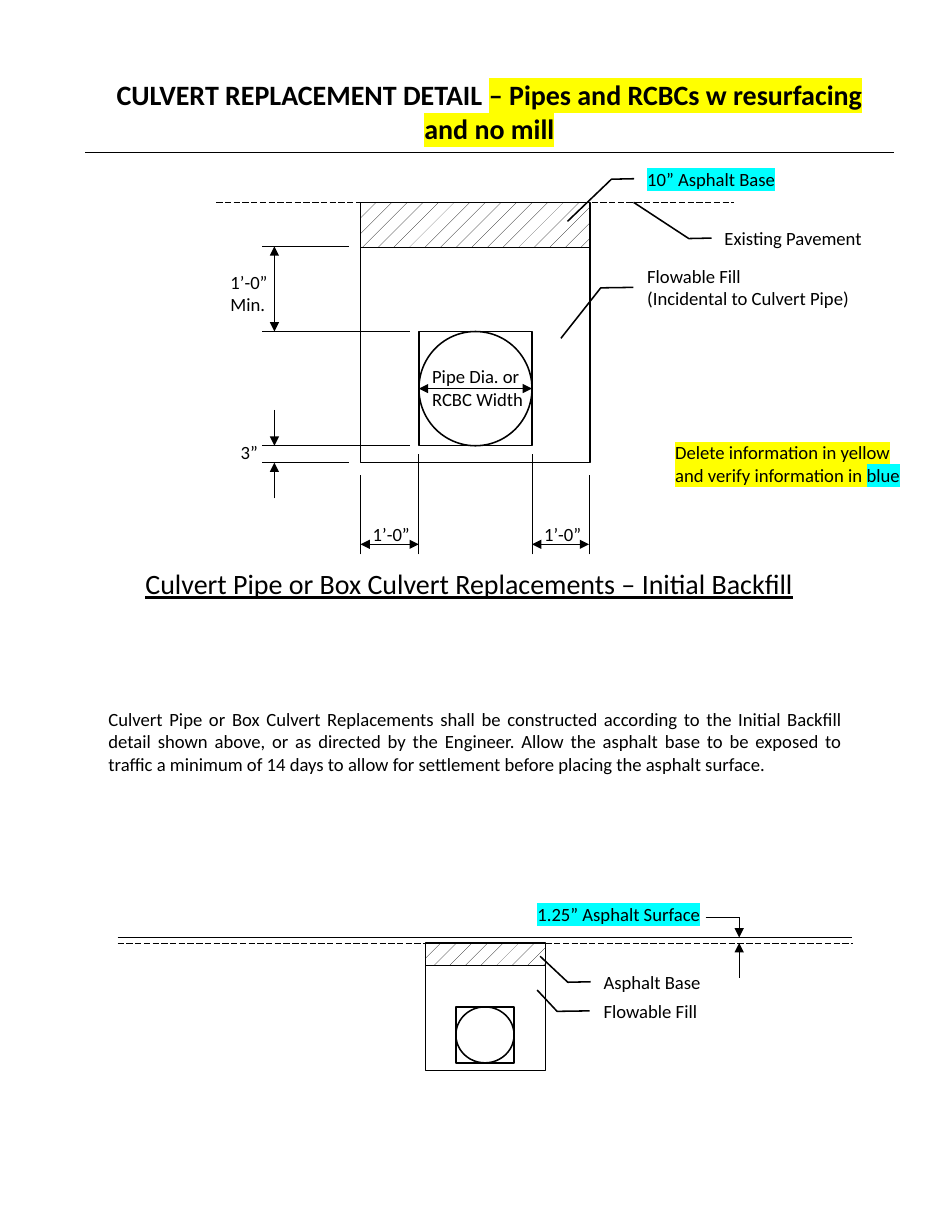
from lxml.etree import SubElement
from pptx import Presentation
from pptx.dml.color import RGBColor
from pptx.enum.dml import MSO_LINE, MSO_PATTERN
from pptx.enum.shapes import MSO_CONNECTOR, MSO_SHAPE
from pptx.enum.text import MSO_ANCHOR, MSO_AUTO_SIZE, PP_ALIGN
from pptx.oxml import parse_xml
from pptx.oxml.ns import nsdecls, qn
from pptx.util import Inches, Pt

BLACK = RGBColor(0x00, 0x00, 0x00)
WHITE = RGBColor(0xFF, 0xFF, 0xFF)
YELLOW = RGBColor(0xFF, 0xFF, 0x00)
CYAN = RGBColor(0x00, 0xFF, 0xFF)

TITLE = [[("CULVERT REPLACEMENT DETAIL ", None),
          ("– Pipes and RCBCs w resurfacing and no mill", YELLOW)]]
HEADING = [[("Culvert Pipe or Box Culvert Replacements – Initial Backfill", None)]]
NOTE = [[("Culvert Pipe or Box Culvert Replacements shall be constructed according "
          "to the Initial Backfill detail shown above, or as directed by the Engineer. "
          "Allow the asphalt base to be exposed to traffic a minimum of 14 days to allow "
          "for settlement before placing the asphalt surface.", None)]]
REMARK = [[("Delete information in yellow and verify information in ", YELLOW),
           ("blue", CYAN)]]
SURFACE = [[("1.25” Asphalt Surface", CYAN)]]

LABELS = [
    (3.23, 4.62, 0.54, ["1’-0”"]),
    (4.76, 4.62, 0.54, ["1’-0”"]),
    (3.76, 3.21, 1.01, ["Pipe Dia. or", "RCBC Width"]),
    (2.05, 3.89, 0.36, ["3”"]),
    (1.96, 2.37, 0.54, ["1’-0”", "Min."]),
]
CALLOUTS = [
    (5.29, 8.59, 1.61, (-0.15, -0.291), ["Asphalt Base"], None),
    (5.29, 8.85, 2.31, (-0.03, -0.214), ["Flowable Fill"], None),
    (5.68, 1.42, 1.61, (1.59, -0.381), ["10” Asphalt Base"], CYAN),
    (5.68, 2.39, 2.31, (1.803, -0.291),
     ["Flowable Fill", "(Incidental to Culvert Pipe)"], None),
    (6.37, 1.95, 1.61, (-0.41, -0.443), ["Existing Pavement"], None),
]
LEFT, RIGHT = 3.22, 5.26
PIPE_L, PIPE_R = 3.74, 4.75
ROAD, BASE, CROWN, INVERT, FLOOR = 1.81, 2.2, 2.96, 3.98, 4.13
DIM_X, DIM_Y = 2.45, 4.86
TOP, GRADE, MARK_X, MARK_Y = 8.37, 8.42, 6.6, 8.19
DETAILS = [
    ((LEFT, BASE, 2.05, 1.93), (LEFT, ROAD, 2.05, 0.4), (PIPE_L, CROWN, 1.01, 1.02)),
    ((3.8, 8.61, 1.07, 0.95), (3.8, GRADE, 1.07, 0.2), (4.07, 8.99, 0.52, 0.5)),
]
DASHED = [(1.93, ROAD, 6.55, ROAD), (1.05, GRADE, 7.62, GRADE)]
PLAIN = [(2.34, y, x, y) for y, x in
         [(BASE, 3.12), (FLOOR, 3.12), (CROWN, 3.66), (INVERT, 3.66)]]
PLAIN += [(x, 4.95, x, y) for x, y in
          [(LEFT, 4.24), (PIPE_L, 4.05), (PIPE_R, 4.05), (RIGHT, 4.24)]]
PLAIN += [(6.3, MARK_Y, MARK_X, MARK_Y)]
SINGLE = [
    (DIM_X, 3.66, DIM_X, INVERT), (DIM_X, 4.45, DIM_X, FLOOR),
    (MARK_X, 8.73, MARK_X, GRADE), (MARK_X, MARK_Y, MARK_X, TOP),
]
DOUBLE = [
    (DIM_X, BASE, DIM_X, CROWN),
    (PIPE_L, DIM_Y, LEFT, DIM_Y), (RIGHT, DIM_Y, PIPE_R, DIM_Y),
]


def write(frame, paras, size=12, align=PP_ALIGN.LEFT, bold=False, under=False):
    for i, parts in enumerate(paras):
        para = frame.paragraphs[0] if i == 0 else frame.add_paragraph()
        para.alignment = align
        for text, mark in parts:
            run = para.add_run()
            run.text = text
            font = run.font
            font.size, font.bold, font.underline = Pt(size), bold, under
            font.color.rgb = BLACK
            font.name = "Calibri"
            if mark:
                fill = font._element.find(qn("a:solidFill"))
                fill.addnext(parse_xml(
                    f'<a:highlight {nsdecls("a")}><a:srgbClr val="{mark}"/></a:highlight>'))


def rows(lines, mark=None):
    return [[(line, mark)] for line in lines]


def add_text(shapes, box, paras, wrap=True, **style):
    frame = shapes.add_textbox(*map(Inches, box)).text_frame
    frame.word_wrap = wrap
    frame.auto_size = MSO_AUTO_SIZE.SHAPE_TO_FIT_TEXT
    write(frame, paras, **style)


def add_box(shapes, kind, box, hatch=False):
    shape = shapes.add_shape(kind, *map(Inches, box))
    shape.shadow.inherit = False
    shape.line.color.rgb = BLACK
    shape.line.width = Pt(1)
    if hatch:
        shape.fill.patterned()
        shape.fill.pattern = MSO_PATTERN.PERCENT_5
        shape.fill.fore_color.rgb = BLACK
        shape.fill.back_color.rgb = WHITE
    else:
        shape.fill.background()
    return shape


def add_line(shapes, ends, width=0.5, dash=False, tips=()):
    line = shapes.add_connector(MSO_CONNECTOR.STRAIGHT, *map(Inches, ends))
    line.line.color.rgb = BLACK
    line.line.width = Pt(width)
    if dash:
        line.line.dash_style = MSO_LINE.LONG_DASH
    for tip in tips:
        SubElement(line.line._get_or_add_ln(), qn(f"a:{tip}"), type="triangle")
    SubElement(line._element.spPr, qn("a:effectLst"))
    return line


def add_title(shapes):
    table = shapes.add_table(1, 1, *map(Inches, (0.75, 0.65, 7.24, 0.41))).table
    table.first_row = table.horz_banding = False
    cell = table.cell(0, 0)
    cell.fill.background()
    write(cell.text_frame, TITLE, 18, PP_ALIGN.CENTER, bold=True)
    props = cell._tc.get_or_add_tcPr()
    for i, side in enumerate("LRTB"):
        color = BLACK if side == "B" else WHITE
        props.insert(i, parse_xml(
            f'<a:ln{side} {nsdecls("a")} w="12700"><a:solidFill>'
            f'<a:srgbClr val="{color}"/></a:solidFill></a:ln{side}>'))


def add_callout(shapes, left, top, width, tip, lines, mark):
    shape = add_box(shapes, MSO_SHAPE.LINE_CALLOUT_2_NO_BORDER, (left, top, width, 0.35))
    for i, value in enumerate((0.502, -0.011, 0.515, -0.137, *tip)):
        shape.adjustments[i] = value
    shape.text_frame.vertical_anchor = MSO_ANCHOR.MIDDLE
    write(shape.text_frame, rows(lines, mark))


def main():
    """Build the culvert replacement detail sheet."""
    deck = Presentation()
    deck.slide_width, deck.slide_height = Inches(8.5), Inches(11)
    shapes = deck.slides.add_slide(deck.slide_layouts[6]).shapes
    add_title(shapes)
    pipes = []
    for trench, base, pipe in DETAILS:
        add_box(shapes, MSO_SHAPE.RECTANGLE, trench)
        add_box(shapes, MSO_SHAPE.RECTANGLE, base, hatch=True)
        add_box(shapes, MSO_SHAPE.OVAL, pipe)
        pipes.append(add_box(shapes, MSO_SHAPE.RECTANGLE, pipe))
    both = ("headEnd", "tailEnd")
    for group, tips in ((PLAIN, ()), (SINGLE, ("tailEnd",)), (DOUBLE, both)):
        for ends in group:
            add_line(shapes, ends, tips=tips)
    for ends in DASHED:
        add_line(shapes, ends, dash=True)
    add_line(shapes, (1.05, TOP, 7.61, TOP), width=1)
    span = add_line(shapes, (PIPE_L, 3.47, PIPE_R, 3.47), tips=both)
    span.begin_connect(pipes[0], 1)
    span.end_connect(pipes[0], 3)
    for left, top, width, lines in LABELS:
        add_text(shapes, (left, top, width, 0.1 + 0.2 * len(lines)), rows(lines), wrap=False)
    for item in CALLOUTS:
        add_callout(shapes, *item)
    add_text(shapes, (1.2, 5.01, 6, 0.4), HEADING, wrap=False, size=18, under=True)
    add_text(shapes, (0.87, 6.27, 6.75, 0.71), NOTE, align=PP_ALIGN.JUSTIFY)
    add_text(shapes, (4.7, 8.01, 1.66, 0.3), SURFACE)
    add_text(shapes, (5.93, 3.89, 2.31, 0.5), REMARK)
    deck.save("out.pptx")


if __name__ == "__main__":
    main()
